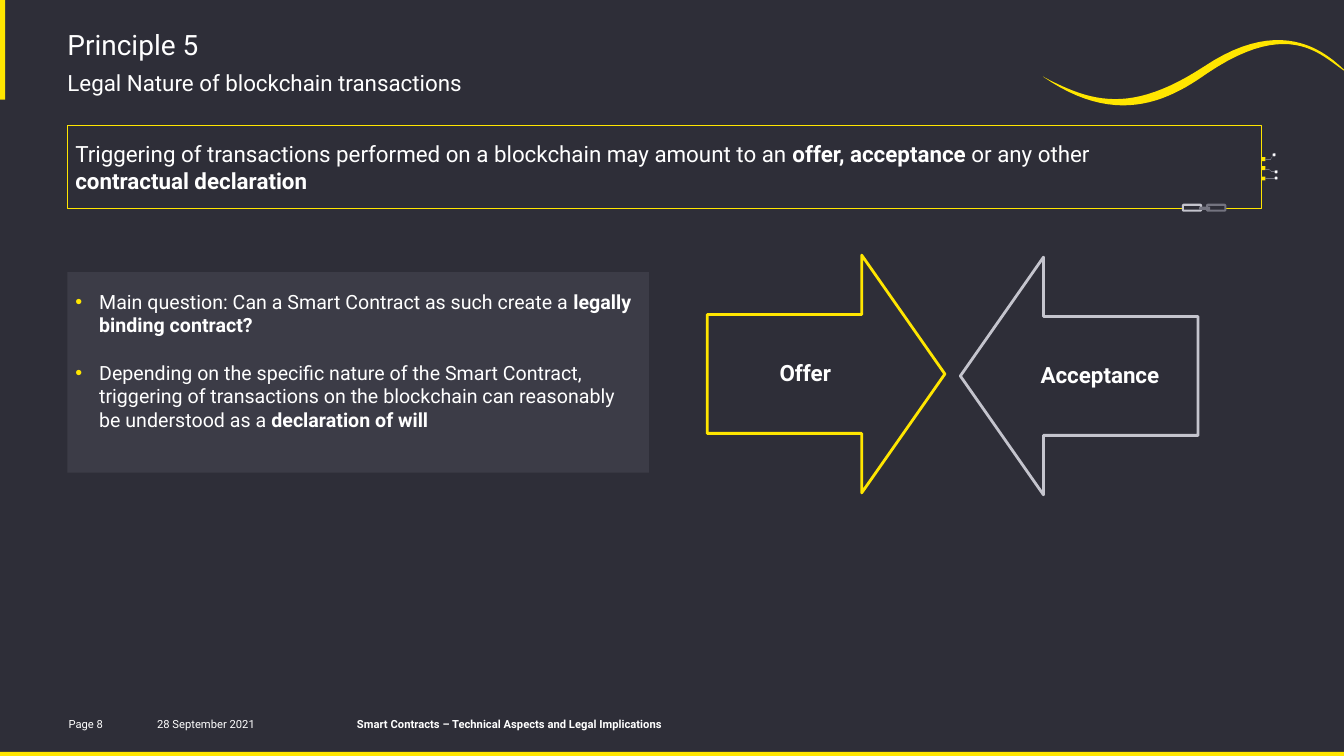
import itertools
from typing import NamedTuple

import pptx
import pptx.dml.color
import pptx.enum.shapes
import pptx.enum.text
import pptx.oxml
import pptx.oxml.ns
import pptx.util
from lxml import etree

Cm = pptx.util.Cm
PRESET = pptx.enum.shapes.MSO_SHAPE
ALIGN = pptx.enum.text.PP_ALIGN
ANCHOR = pptx.enum.text.MSO_ANCHOR

DARK, YELLOW, WHITE, GREY, SILVER = "2E2E38", "FFE600", "FFFFFF", "747480", "C4C4CD"
WIDTH, HEIGHT = 33.88, 19.05
MARGIN = 1.7


class Box(NamedTuple):
    left: float
    top: float
    width: float
    height: float


class Arrow(NamedTuple):
    label: str
    preset: int
    left: float
    top: float
    color: str


class Footer(NamedTuple):
    text: str
    left: float
    width: float


class Pin(NamedTuple):
    """A contact on the callout's edge, its trace and the dot at the end."""
    top: float
    trace: list
    dot: tuple


def paint(color_holder, color: str) -> None:
    """Apply a hex colour to a fill, or to a font's colour."""
    if hasattr(color_holder, "solid"):
        color_holder.solid()
        color_holder = color_holder.fore_color
    color_holder.rgb = pptx.dml.color.RGBColor.from_string(color)


def sub(parent, tag: str, **attributes: str):
    return etree.SubElement(parent, pptx.oxml.ns.qn(tag), **attributes)


def style(shape, fill: str = "", line: str = "", line_width: float = 0.5):
    shape.shadow.inherit = False
    if fill:
        paint(shape.fill, fill)
    else:
        shape.fill.background()
    if line:
        paint(shape.line.fill, line)
        shape.line.width = pptx.util.Pt(line_width)
    else:
        shape.line.fill.background()
    return shape


def add_preset(slide, preset: int, box: Box, **look):
    return style(slide.shapes.add_shape(preset, *map(Cm, box)), **look)


def place(shape, box: Box):
    shape.left, shape.top, shape.width, shape.height = map(Cm, box)
    return shape


def write(shape, *paragraphs: str, size: float, bold: bool = False, align=ALIGN.LEFT,
          anchor=ANCHOR.MIDDLE, inset: float = 0, bottom: float = 0, bullet: str = "",
          indent: float = 0, gap: float = 0, line_spacing: float = 1.0) -> None:
    """Write paragraphs; **marks** switch bold, and a newline is a line break."""
    frame = shape.text_frame
    frame.word_wrap = True
    frame.auto_size = pptx.enum.text.MSO_AUTO_SIZE.NONE
    frame.vertical_anchor = anchor
    frame.margin_left = frame.margin_top = frame.margin_right = Cm(inset)
    frame.margin_bottom = Cm(bottom or inset)
    for number, text in enumerate(paragraphs):
        paragraph = frame.add_paragraph() if number else frame.paragraphs[0]
        properties = paragraph._p.get_or_add_pPr()
        properties.set("marL", str(Cm(indent)))
        properties.set("indent", str(-Cm(indent)))
        if bullet:
            sub(sub(properties, "a:buClr"), "a:srgbClr", val=YELLOW)
            sub(properties, "a:buFont", typeface="Arial")
            sub(properties, "a:buChar", char=bullet)
        else:
            sub(properties, "a:buNone")
        paragraph.alignment = align
        paragraph.line_spacing = line_spacing
        paragraph.space_before = pptx.util.Pt(gap if number else 0)
        for part, segment in enumerate(text.split("**")):
            for row, words in enumerate(segment.split("\n")):
                if row:
                    paragraph.add_line_break()
                if not words:
                    continue
                run = paragraph.add_run()
                run.text = words
                run.font.name = "Roboto"
                run.font.size = pptx.util.Pt(size)
                run.font.bold = bold or part % 2 == 1
                paint(run.font.color, WHITE)


def add_trace(slide, start: tuple, end: tuple) -> None:
    trace = slide.shapes.add_connector(
        pptx.enum.shapes.MSO_CONNECTOR.STRAIGHT, *map(Cm, (*start, *end)))
    paint(trace.line.fill, GREY)
    trace.line.width = pptx.util.Pt(0.25)
    sub(trace._element.spPr, "a:effectLst")


def curve_points(knots: list, steps: int = 24) -> list:
    """Points along a chain of cubic curves; each knot ends one and starts the next."""
    points = []
    for first in range(0, len(knots) - 1, 3):
        a, b, c, d = knots[first:first + 4]
        for step in range(1, steps + 1):
            t = step / steps
            u = 1 - t
            points.append(tuple(
                Cm(u**3 * a[i] + 3 * u * u * t * b[i] + 3 * u * t * t * c[i] + t**3 * d[i])
                for i in (0, 1)))
    return points


WAVE = [(26.29, 1.93), (27.53, 2.59), (28.52, 2.87), (30.35, 1.68), (32.44, 0.28),
        (33.55, 1.45), (33.96, 1.83), (33.38, 1.5), (32.61, 0.38), (30.43, 1.85),
        (29.39, 2.59), (28.09, 3.18), (26.29, 1.93)]
FOOTERS = [Footer("Page 8", 1.73, 1.85), Footer("28 September 2021", 3.96, 3.3),
           Footer("**Smart Contracts – Technical Aspects and Legal Implications**", 9, 8.59)]
ARROWS = [Arrow("Offer", PRESET.RIGHT_ARROW, 17.83, 6.43, YELLOW),
          Arrow("Acceptance", PRESET.LEFT_ARROW, 24.21, 6.48, SILVER)]
PINS = [Pin(3.96, [(31.9, 4.01), (32.03, 4.01), (32.08, 3.94)], (32.08, 3.86)),
        Pin(4.19, [(31.9, 4.26), (31.98, 4.26), (32.05, 4.32), (32.18, 4.32)], (32.13, 4.29)),
        Pin(4.45, [(31.9, 4.5), (32.13, 4.5)], (32.13, 4.45))]


def main() -> None:
    deck = pptx.Presentation()
    deck.slide_width, deck.slide_height = Cm(WIDTH), Cm(HEIGHT)
    slide = deck.slides.add_slide(deck.slide_layouts[3])
    paint(slide.background.fill, DARK)
    title, subtitle, questions = slide.placeholders

    # Yellow wave and edge bars
    wave = slide.shapes.build_freeform(*map(Cm, WAVE[0]), scale=1.0)
    wave.add_line_segments(curve_points(WAVE))
    style(wave.convert_to_shape(), fill=YELLOW)
    for bar in (Box(0, 18.95, WIDTH, 0.1), Box(0, 0, 0.13, 2.51)):
        add_preset(slide, PRESET.RECTANGLE, bar, fill=YELLOW)

    # Headings and footer
    write(place(title, Box(MARGIN, 0.69, 24.05, 1.07)), "Principle 5",
          size=20, anchor=ANCHOR.TOP)
    write(place(subtitle, Box(MARGIN, 1.75, 24.05, 0.74)),
          "Legal Nature of blockchain transactions", size=16, anchor=ANCHOR.TOP)
    for footer in FOOTERS:
        box = Box(footer.left, 17.98, footer.width, 0.51)
        write(slide.shapes.add_textbox(*map(Cm, box)), footer.text, size=8)

    # Offer and acceptance arrows
    for arrow in ARROWS:
        shape = add_preset(slide, arrow.preset, Box(arrow.left, arrow.top, 5.99, 5.99),
                           line=arrow.color, line_width=2)
        shape.adjustments[0], shape.adjustments[1] = 0.5, 0.35
        write(shape, arrow.label, size=16, bold=True, align=ALIGN.CENTER,
              inset=0.3, line_spacing=0.9)

    # Callout with circuit pins and chain
    callout = add_preset(slide, PRESET.RECTANGLE, Box(MARGIN, 3.15, 30.1, 2.11),
                         fill=DARK, line=YELLOW)
    write(callout, "Triggering of transactions performed on a blockchain may amount to an "
          "**offer, acceptance **or any other\n**contractual declaration**",
          size=16, inset=0.2)
    for pin in PINS:
        add_preset(slide, PRESET.RECTANGLE, Box(31.8, pin.top, 0.1, 0.1), fill=YELLOW)
        for start, end in itertools.pairwise(pin.trace):
            add_trace(slide, start, end)
        add_preset(slide, PRESET.OVAL, Box(*pin.dot, 0.08, 0.08),
                   fill=WHITE, line=GREY, line_width=0.25)
    for left, color in ((30.43, GREY), (29.82, SILVER)):
        add_preset(slide, PRESET.ROUNDED_RECTANGLE, Box(left, 5.16, 0.46, 0.15),
                   fill=DARK, line=color, line_width=1.5)
    add_preset(slide, PRESET.RECTANGLE, Box(30.23, 5.21, 0.28, 0.08), fill=GREY)

    # Question list on a translucent panel
    place(questions, Box(MARGIN, 6.86, 14.66, 5.05))
    paint(questions.fill, GREY)
    panel_color = questions._element.spPr.find(".//" + pptx.oxml.ns.qn("a:srgbClr"))
    sub(panel_color, "a:alpha", val="21000")
    write(questions,
          "Main question: Can a Smart Contract as such create a **legally binding contract?**",
          "Depending on the specific nature of the Smart Contract, triggering of transactions "
          "on the blockchain can reasonably be understood as a **declaration of will**",
          size=14, inset=0.2, bottom=0.8, bullet="•", indent=0.6, gap=17)

    deck.save("out.pptx")


if __name__ == "__main__":
    main()
